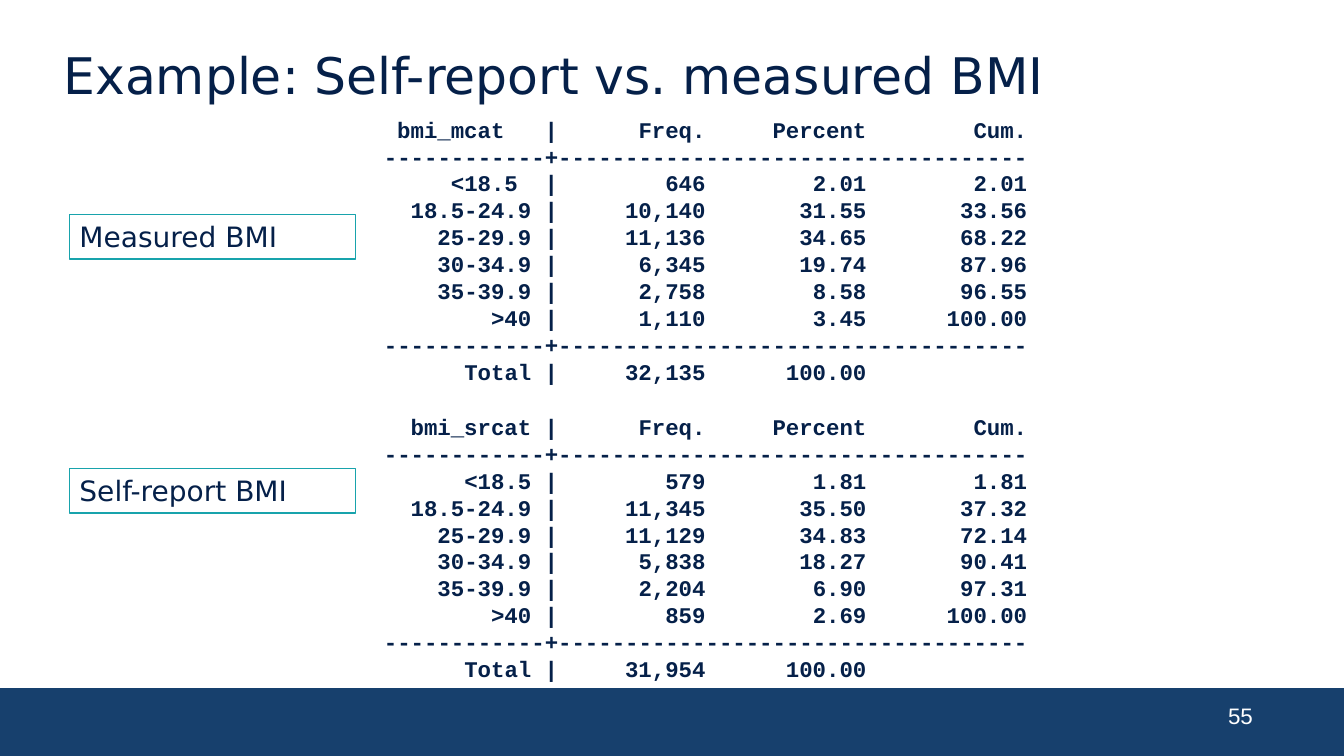
"""Build a slide comparing measured and self-reported BMI frequency tables."""
from dataclasses import dataclass

from lxml.etree import SubElement
from pptx import Presentation
from pptx.dml.color import RGBColor
from pptx.enum.shapes import MSO_SHAPE
from pptx.enum.text import MSO_ANCHOR, MSO_AUTO_SIZE, PP_ALIGN
from pptx.oxml.ns import qn
from pptx.util import Inches, Pt

NAVY = RGBColor(0x05, 0x20, 0x49)
BLUE = RGBColor(0x17, 0x40, 0x6D)
TEAL = RGBColor(0x18, 0xA3, 0xAC)
WHITE = RGBColor(0xFF, 0xFF, 0xFF)
SANS, MONO = "DejaVu Sans", "Courier New"
CHAR_WIDTH = Pt(9.57)
LABEL_END = 11
COLUMN_STOPS = [(12, "l"), (24, "r"), (36, "r"), (48, "r")]
HEADINGS = ("Freq.", "Percent", "Cum.")
CATEGORIES = ("<18.5", "18.5-24.9", "25-29.9", "30-34.9", "35-39.9", ">40")
RULE = "-" * 12 + "+" + "-" * 35


@dataclass
class FrequencyTable:
    caption: str
    caption_top: float
    top: float
    variable: str
    rows: list[tuple[str, ...]]
    total: tuple[str, ...]
    label_ends: dict[str, int]


TABLES = [
    FrequencyTable(
        "Measured BMI", 2.13, 1.1, "bmi_mcat",
        [("646", "2.01", "2.01"), ("10,140", "31.55", "33.56"),
         ("11,136", "34.65", "68.22"), ("6,345", "19.74", "87.96"),
         ("2,758", "8.58", "96.55"), ("1,110", "3.45", "100.00")],
        ("32,135", "100.00"), {"bmi_mcat": 9, "<18.5": 10}),
    FrequencyTable(
        "Self-report BMI", 4.65, 4.05, "bmi_srcat",
        [("579", "1.81", "1.81"), ("11,345", "35.50", "37.32"),
         ("11,129", "34.83", "72.14"), ("5,838", "18.27", "90.41"),
         ("2,204", "6.90", "97.31"), ("859", "2.69", "100.00")],
        ("31,954", "100.00"), {}),
]


def add_run(p, text: str, size: float, font: str, color: RGBColor, bold: bool = False) -> None:
    """Add one formatted run to a paragraph."""
    r = p.add_run()
    r.text = text
    r.font.size, r.font.name, r.font.bold = Pt(size), font, bold
    r.font.color.rgb = color


def add_tab_stops(p, label_end: int) -> None:
    """Set the tab stops of a table row, in character columns."""
    tabs = SubElement(p._p.get_or_add_pPr(), qn("a:tabLst"))
    for column, align in [(label_end, "r"), *COLUMN_STOPS]:
        SubElement(tabs, qn("a:tab"), pos=str(column * CHAR_WIDTH), algn=align)


def add_rect(s, left: float, top: float, width: float, height: float,
             line: RGBColor, line_width: float, fill: RGBColor | None = None):
    """Add a rectangle without shadow."""
    sp = s.shapes.add_shape(MSO_SHAPE.RECTANGLE, Inches(left), Inches(top),
                            Inches(width), Inches(height))
    sp.shadow.inherit = False
    sp.line.color.rgb = line
    sp.line.width = Pt(line_width)
    if fill is None:
        sp.fill.background()
    else:
        sp.fill.solid()
        sp.fill.fore_color.rgb = fill
    return sp


def add_frequency_table(s, table: FrequencyTable) -> None:
    """Add the monospaced table and its caption box."""
    tf = s.shapes.add_textbox(Inches(3.71), Inches(table.top),
                              Inches(8.47), Inches(2.79)).text_frame
    tf.word_wrap = True
    body = [(label, *values) for label, values in zip(CATEGORIES, table.rows)]
    lines = [(table.variable, *HEADINGS), None, *body, None, ("Total", *table.total)]
    for i, line in enumerate(lines):
        p = tf.paragraphs[0] if i == 0 else tf.add_paragraph()
        text = RULE
        if line:
            label, *values = line
            add_tab_stops(p, table.label_ends.get(label, LABEL_END))
            text = "\t" + "\t".join([label, "|", *values])
        add_run(p, text, 16, MONO, NAVY, bold=True)

    tf = add_rect(s, 0.69, table.caption_top, 2.84, 0.44, TEAL, 0.75).text_frame
    tf.word_wrap = True
    tf.vertical_anchor = MSO_ANCHOR.TOP
    p = tf.paragraphs[0]
    p.alignment = PP_ALIGN.LEFT
    add_run(p, table.caption, 20, SANS, NAVY)


def add_title(s, text: str) -> None:
    """Place and fill the title placeholder."""
    sp = s.shapes.title
    sp.left, sp.top, sp.width, sp.height = map(Inches, (0.53, 0.48, 12.27, 0.62))
    tf = sp.text_frame
    tf.auto_size = MSO_AUTO_SIZE.NONE
    tf.vertical_anchor = MSO_ANCHOR.TOP
    p = tf.paragraphs[0]
    p.alignment = PP_ALIGN.LEFT
    p.line_spacing = 0.85
    add_run(p, text, 36, SANS, NAVY)


def add_page_number(s, number: str) -> None:
    """Add the slide number in the footer band."""
    tf = s.shapes.add_textbox(Inches(12.18), Inches(7.06), Inches(0.62), Inches(0.17)).text_frame
    tf.word_wrap = True
    tf.margin_left = tf.margin_right = tf.margin_top = tf.margin_bottom = 0
    tf.vertical_anchor = MSO_ANCHOR.BOTTOM
    add_run(tf.paragraphs[0], number, 16, "Arial", WHITE)


def main() -> None:
    """Build and save the presentation."""
    prs = Presentation()
    prs.slide_width, prs.slide_height = Inches(13.33), Inches(7.5)
    s = prs.slides.add_slide(prs.slide_layouts[5])
    add_rect(s, 0, 6.84, 13.33, 0.66, BLUE, 1.5, BLUE)
    add_title(s, "Example: Self-report vs. measured BMI")
    add_page_number(s, "55")
    for table in TABLES:
        add_frequency_table(s, table)
    prs.save("out.pptx")


if __name__ == "__main__":
    main()
